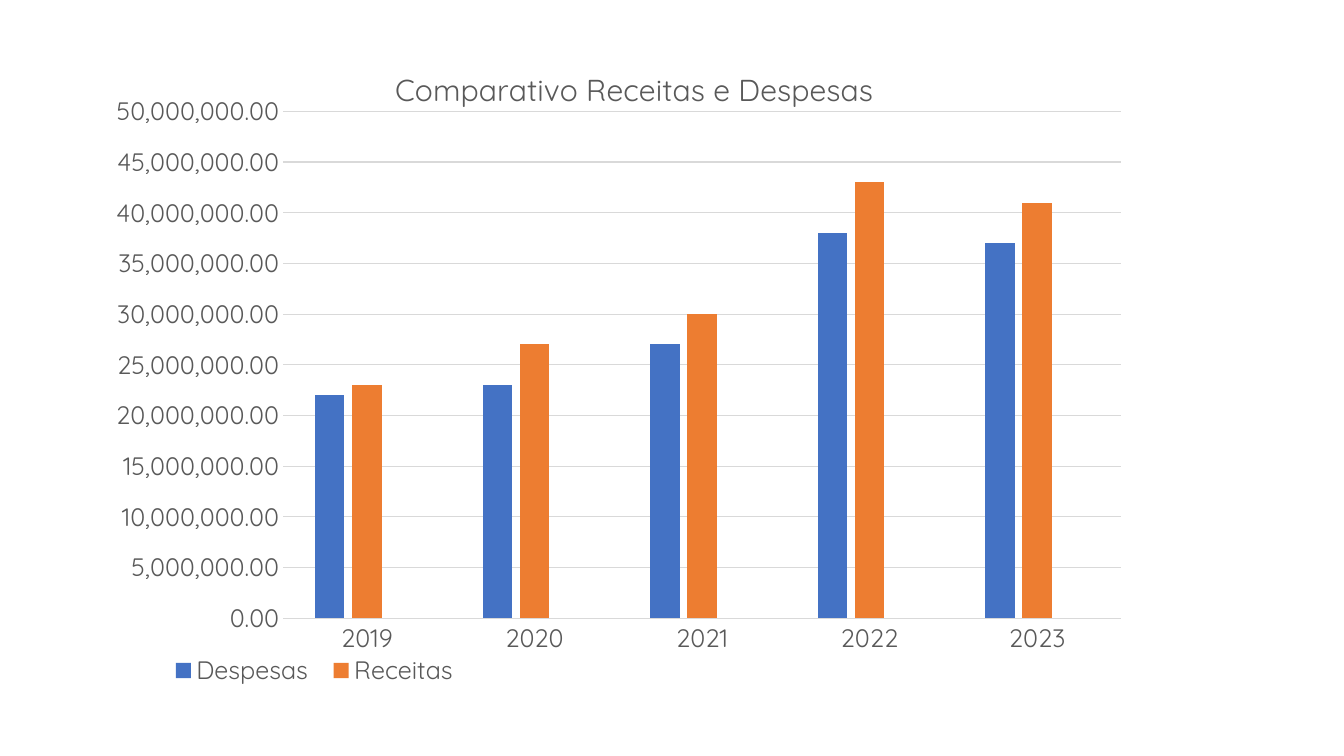
from pptx import Presentation
from pptx import util as u
from pptx.chart.data import CategoryChartData
from pptx.dml.color import RGBColor
from pptx.enum import chart as ch
from pptx.oxml import parse_xml
from pptx.oxml.ns import nsdecls, qn

PX = 9071
FONT = "Quicksand"
GREY = RGBColor(0x59, 0x59, 0x59)
RULE = RGBColor(0xD9, 0xD9, 0xD9)
BLUE = RGBColor(0x44, 0x72, 0xC4)
ORANGE = RGBColor(0xED, 0x7D, 0x31)
SILVER = RGBColor(0xA5, 0xA5, 0xA5)

MILLION = 1_000_000
YEARS = ["2019", "2020", "2021", "2022", "2023"]
SERIES = [
    ("Despesas", [22, 23, 27, 38, 37], BLUE),
    ("Receitas", [23, 27, 30, 43, 41], ORANGE),
    ("Series 3", [None] * len(YEARS), SILVER),
]


def px(n):
    return u.Emu(n * PX)


def style_font(font, size=18, color=GREY):
    font.name = FONT
    font.size = u.Pt(size)
    font.bold = False
    font.color.rgb = color


def add_text(tf, text, **fmt):
    tf.text = text
    style_font(tf.paragraphs[0].runs[0].font, **fmt)


def style_line(line):
    line.color.rgb = RULE
    line.width = u.Pt(0.75)


def place(el, target="", **box):
    for old in el.findall(qn("c:layout")):
        el.remove(old)
    modes = "".join(f'<c:{k}Mode val="edge"/>' for k in "xy")
    sizes = "".join(f'<c:{k} val="{v}"/>' for k, v in box.items())
    layout = parse_xml(
        f'<c:layout {nsdecls("c")}><c:manualLayout>{target}{modes}{sizes}'
        "</c:manualLayout></c:layout>"
    )
    overlay = el.find(qn("c:overlay"))
    if overlay is None:
        el.insert(0, layout)
    else:
        overlay.addprevious(layout)


def style_axes(chart):
    cat, val = chart.category_axis, chart.value_axis
    for axis in (cat, val):
        axis.major_tick_mark = axis.minor_tick_mark = ch.XL_TICK_MARK.NONE
        style_font(axis.tick_labels.font)
    style_line(cat.format.line)
    val.format.line.fill.background()
    val.minimum_scale = 0
    val.maximum_scale = 50 * MILLION
    val.major_unit = 5 * MILLION
    val.has_major_gridlines = True
    style_line(val.major_gridlines.format.line)
    val.tick_labels.number_format = "#,##0.00"
    val.tick_labels.number_format_is_linked = False


def style_legend(chart, hidden):
    chart.has_legend = True
    legend = chart.legend
    legend.position = ch.XL_LEGEND_POSITION.BOTTOM
    legend.include_in_layout = False
    style_font(legend.font)
    el = legend._element
    el.find(qn("c:overlay")).addprevious(parse_xml(
        f'<c:legendEntry {nsdecls("c")}><c:idx val="{hidden}"/>'
        '<c:delete val="1"/></c:legendEntry>'
    ))
    place(el, x=0.04, y=0.93, w=0.31, h=0.06)


def add_column_chart(s, x, y, w, h):
    data = CategoryChartData(number_format="#,##0.00")
    data.categories = YEARS
    for name, values, _ in SERIES:
        data.add_series(name, [v and v * MILLION for v in values])
    chart = s.shapes.add_chart(
        ch.XL_CHART_TYPE.COLUMN_CLUSTERED, px(x), px(y), px(w), px(h), data
    ).chart
    style_font(chart.font)

    chart.has_title = True
    add_text(chart.chart_title.text_frame, "Comparativo Receitas e Despesas", size=21.6)
    chart.chart_title.include_in_layout = False
    place(chart.chart_title._element, x=0.27, y=0.04)

    plot = chart.plots[0]
    plot.gap_width = 219
    plot.overlap = -27
    plot.vary_by_categories = False
    for series, (_, _, color) in zip(plot.series, SERIES):
        series.format.fill.solid()
        series.format.fill.fore_color.rgb = color
    place(chart._chartSpace.chart.plotArea, '<c:layoutTarget val="inner"/>',
          x=0.164, y=0.114, w=0.834, h=0.767)

    style_axes(chart)
    style_legend(chart, hidden=2)


def main():
    prs = Presentation()
    prs.slide_width, prs.slide_height = px(1344), px(756)
    s = prs.slides.add_slide(prs.slide_layouts[6])
    add_column_chart(s, 116, 36, 1007, 661)
    prs.save("out.pptx")


if __name__ == "__main__":
    main()
